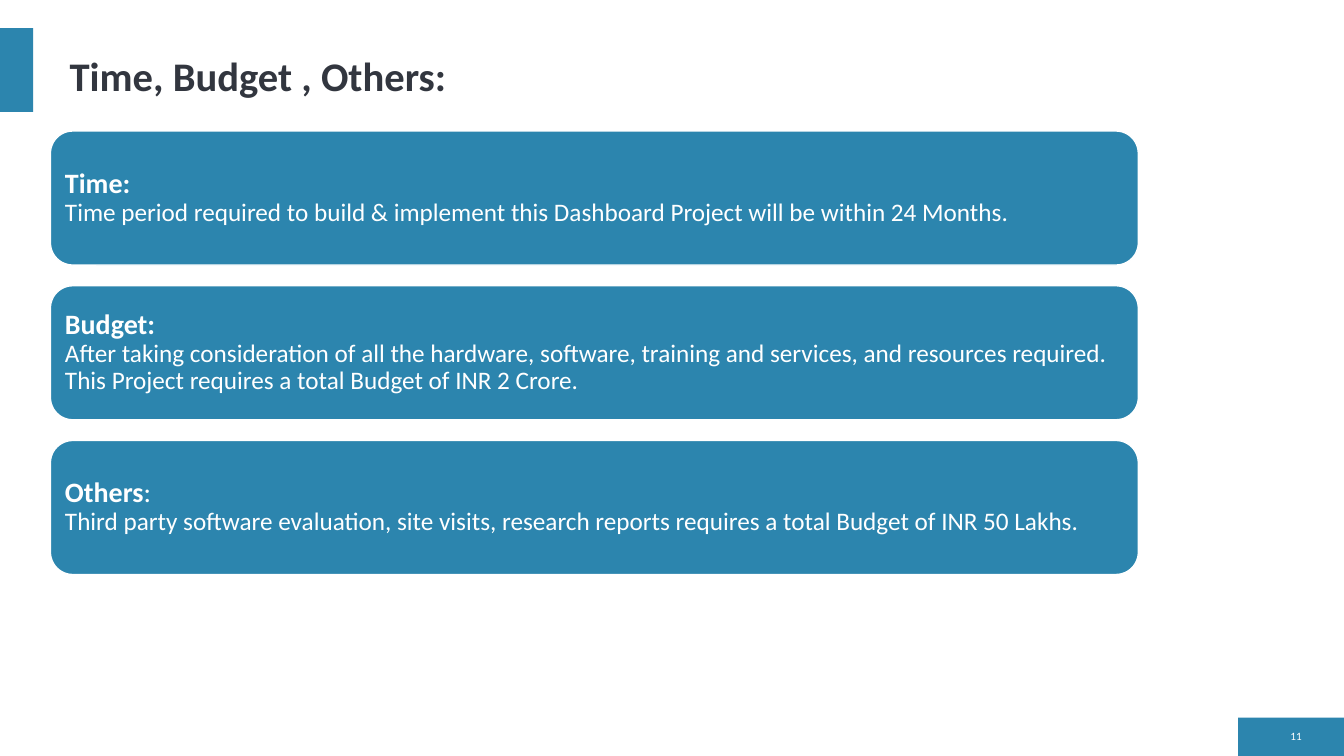
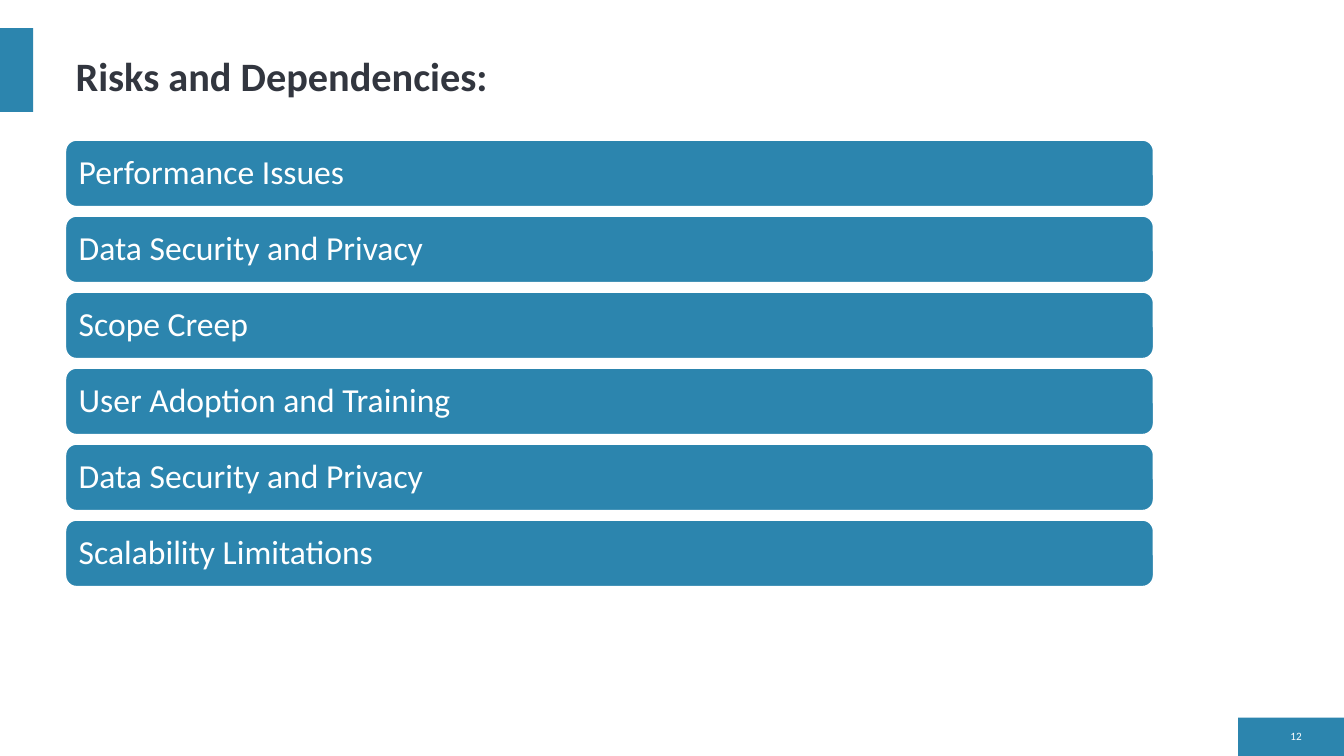
from lxml.etree import SubElement
from pptx import Presentation
from pptx.dml.color import RGBColor
from pptx.enum.shapes import MSO_SHAPE
from pptx.enum.text import MSO_ANCHOR, MSO_AUTO_SIZE, PP_ALIGN
from pptx.oxml.ns import qn
from pptx.util import Inches, Pt

BLUE, DARK, WHITE = "2C85AE", "32363F", "FFFFFF"
FONT = "Calibri"
FIRST_NUMBER = 11
BANDS = [(12.28, 7.12, 1.05, 0.38), (0, 0.28, 0.33, 0.83)]
CARD_WIDTH = 10.79

HEADING, COLON, DETAIL = (20, True), (20, False), (18, False)
RISK = (24, False)
SLIDES = [
    {
        "title": "Time, Budget , Others:", "title_at": (0.59, 0.42, 4.3, 0.63), "title_size": 29,
        "left": 0.5, "first_top": 1.3, "last_top": 4.37, "height": 1.33, "inset": 0.08,
        "cards": [
            [[("Time:", HEADING)],
             [("Time period required to build & implement this Dashboard Project "
               "will be within 24 Months.", DETAIL)]],
            [[("Budget:", HEADING)],
             [("After taking consideration of all the hardware, software, training and services, "
               "and resources required. This Project requires a total Budget of INR 2 Crore.", DETAIL)]],
            [[("Others", HEADING), (":", COLON)],
             [("Third party software evaluation, site visits, research reports requires "
               "a total Budget of INR 50 Lakhs.", DETAIL)]],
        ],
    },
    {
        "title": "Risks and Dependencies:", "title_at": (0.65, 0.41, 4.63, 0.63), "title_size": 28.8,
        "left": 0.65, "first_top": 1.39, "last_top": 5.16, "height": 0.66, "inset": 0.1,
        "cards": [[[(risk, RISK)]] for risk in (
            "Performance Issues", "Data Security and Privacy", "Scope Creep",
            "User Adoption and Training", "Data Security and Privacy", "Scalability Limitations")],
    },
]


def color(value):
    return RGBColor.from_string(value)


def style(paragraph, size, value, bold=False):
    paragraph.line_spacing = 0.9
    font = paragraph.font
    font.name, font.size, font.bold = FONT, Pt(size), bold
    font.color.rgb = color(value)


def add_block(page, kind, area):
    block = page.shapes.add_shape(kind, *map(Inches, area))
    block.shadow.inherit = False
    block.fill.solid()
    block.fill.fore_color.rgb = color(BLUE)
    block.line.fill.background()
    return block


def add_bands(layout, page):
    for area in BANDS:
        band = add_block(page, MSO_SHAPE.RECTANGLE, area)
        layout.shapes.element.append(band.element)


def add_title(page, content):
    title = page.shapes.title
    title.left, title.top, title.width, title.height = map(Inches, content["title_at"])
    frame = title.text_frame
    frame.text = content["title"]
    frame.auto_size = MSO_AUTO_SIZE.NONE
    frame.vertical_anchor = MSO_ANCHOR.BOTTOM
    paragraph = frame.paragraphs[0]
    paragraph.alignment = PP_ALIGN.LEFT
    style(paragraph, content["title_size"], DARK, True)


def add_number(page, number):
    box = page.shapes.add_textbox(*map(Inches, (12.6, 7.2, 0.41, 0.23)))
    frame = box.text_frame
    frame.word_wrap = True
    frame.vertical_anchor = MSO_ANCHOR.MIDDLE
    paragraph = frame.paragraphs[0]
    paragraph.alignment = PP_ALIGN.RIGHT
    style(paragraph, 8, WHITE)
    field = SubElement(paragraph._p, qn("a:fld"), type="slidenum",
                       id="{B6F15528-21DE-4FAA-801E-634DDDAF4B2B}")
    SubElement(field, qn("a:rPr"), lang="en-US")
    SubElement(field, qn("a:t")).text = str(number)


def add_card(page, area, inset, lines):
    card = add_block(page, MSO_SHAPE.ROUNDED_RECTANGLE, area)
    card.line.color.rgb = color(WHITE)
    card.line.width = Pt(1)
    frame = card.text_frame
    frame.word_wrap = True
    frame.vertical_anchor = MSO_ANCHOR.MIDDLE
    frame.margin_left = frame.margin_right = Inches(inset)
    frame.margin_top = frame.margin_bottom = Inches(inset)
    paragraph = frame.paragraphs[0]
    paragraph.alignment = PP_ALIGN.LEFT
    style(paragraph, lines[0][0][1][0], WHITE)
    for index, line in enumerate(lines):
        if index:
            paragraph.add_line_break()
        for text, (size, bold) in line:
            span = paragraph.add_run()
            span.text = text
            span.font.size, span.font.bold = Pt(size), bold


def add_cards(page, content):
    cards = content["cards"]
    pitch = (content["last_top"] - content["first_top"]) / (len(cards) - 1)
    for index, lines in enumerate(cards):
        top = content["first_top"] + index * pitch
        area = (content["left"], top, CARD_WIDTH, content["height"])
        add_card(page, area, content["inset"], lines)


def main():
    deck = Presentation()
    deck.slide_width, deck.slide_height = Inches(13.33), Inches(7.5)
    deck.element.set("firstSlideNum", str(FIRST_NUMBER))
    layout = deck.slide_layouts[5]
    for number, content in enumerate(SLIDES, FIRST_NUMBER):
        page = deck.slides.add_slide(layout)
        if number == FIRST_NUMBER:
            add_bands(layout, page)
        add_title(page, content)
        add_number(page, number)
        add_cards(page, content)
    deck.save("out.pptx")


if __name__ == "__main__":
    main()
